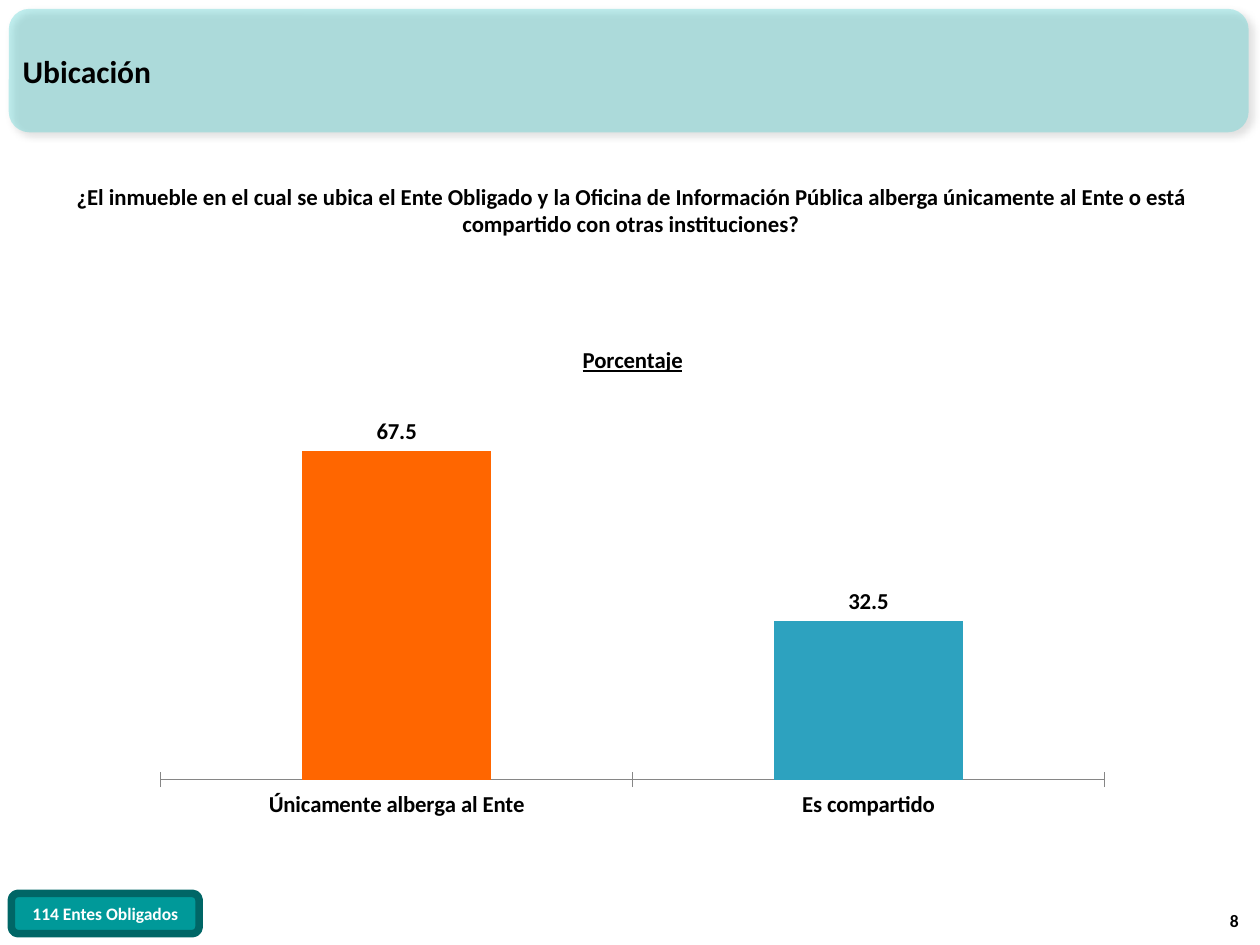
from dataclasses import dataclass

from lxml import etree
from pptx import Presentation
from pptx.chart.data import CategoryChartData
from pptx.dml.color import RGBColor
from pptx.enum import chart as ch, shapes, text
from pptx.oxml import ns, parse_xml
from pptx.util import Inches, Pt

FONT = "Calibri"
BLACK = RGBColor(0, 0, 0)
WHITE = RGBColor(255, 255, 255)
AQUA = RGBColor(0x33, 0xCC, 0xCC)
TEAL = RGBColor(0x00, 0x99, 0x99)
DARK = RGBColor(0x00, 0x66, 0x66)
BLUE = RGBColor(0x2D, 0xA2, 0xBF)
ORANGE = RGBColor(0xFF, 0x66, 0x00)
GRAY = RGBColor(0x86, 0x86, 0x86)


@dataclass
class Box:
    left: float
    top: float
    width: float
    height: float

    def place(self) -> list:
        return [Inches(n) for n in (self.left, self.top, self.width, self.height)]


@dataclass
class Label:
    words: str
    size: int
    align: text.PP_ALIGN
    anchor: text.MSO_ANCHOR = text.MSO_ANCHOR.MIDDLE
    color: RGBColor = BLACK


def style(font, size: float, color: RGBColor = BLACK) -> None:
    font.name, font.size, font.bold = FONT, Pt(size), True
    font.color.rgb = color


def write(shape, label: Label) -> None:
    frame = shape.text_frame
    frame.text = label.words
    frame.word_wrap = True
    frame.auto_size = text.MSO_AUTO_SIZE.NONE
    frame.vertical_anchor = label.anchor
    para = frame.paragraphs[0]
    para.alignment = label.align
    style(para.font, label.size, label.color)


def add_round(slide, box: Box, fill: RGBColor):
    shape = slide.shapes.add_shape(shapes.MSO_SHAPE.ROUNDED_RECTANGLE, *box.place())
    shape.shadow.inherit = False
    shape.fill.solid()
    shape.fill.fore_color.rgb = fill
    shape.line.fill.background()
    return shape


def add_glass(shape, alpha: int) -> None:
    """Make the fill translucent and give the shape a soft shadow."""
    props = shape.element.spPr
    color = props.find(ns.qn("a:solidFill"))[0]
    etree.SubElement(color, ns.qn("a:alpha"), val=str(alpha * 1000))
    props.find(ns.qn("a:effectLst")).append(parse_xml(
        f'<a:outerShdw {ns.nsdecls("a")} blurRad="{Pt(4)}" dist="{Pt(3)}"'
        ' dir="2700000" algn="tl" rotWithShape="0"><a:srgbClr val="000000">'
        '<a:alpha val="40000"/></a:srgbClr></a:outerShdw>'))


def set_plot(chart, box: Box) -> None:
    """Fix the inner plot area, in fractions of the chart."""
    plot = chart.element.find(".//" + ns.qn("c:plotArea"))
    for old in plot.findall(ns.qn("c:layout")):
        plot.remove(old)
    plot.insert(0, parse_xml(
        f'<c:layout {ns.nsdecls("c")}><c:manualLayout><c:layoutTarget val="inner"/>'
        '<c:xMode val="edge"/><c:yMode val="edge"/>'
        f'<c:x val="{box.left}"/><c:y val="{box.top}"/>'
        f'<c:w val="{box.width}"/><c:h val="{box.height}"/>'
        '</c:manualLayout></c:layout>'))


def add_bars(slide, box: Box) -> None:
    data = CategoryChartData(number_format="0.0")
    data.categories = ["Únicamente alberga al Ente", "Es compartido"]
    data.add_series("Porcentaje", (67.5, 32.5))
    kind = ch.XL_CHART_TYPE.COLUMN_CLUSTERED
    chart = slide.shapes.add_chart(kind, *box.place(), data).chart
    style(chart.font, 13)
    chart.has_legend = False
    set_plot(chart, Box(0.02, 0.13, 0.96, 0.77))

    # Chart title
    chart.has_title = True
    chart.chart_title.include_in_layout = False
    frame = chart.chart_title.text_frame
    frame.text = "Porcentaje"
    font = frame.paragraphs[0].font
    style(font, 13)
    font.underline = True

    # Axes
    axis = chart.category_axis
    axis.major_tick_mark = ch.XL_TICK_MARK.CROSS
    axis.format.line.color.rgb = GRAY
    scale = chart.value_axis
    scale.minimum_scale, scale.maximum_scale = 0, 80
    scale.has_major_gridlines = False
    scale.visible = False

    # Columns and their values
    plot = chart.plots[0]
    plot.gap_width = 150
    plot.vary_by_categories = False
    series = plot.series[0]
    for part, color in ((series, BLUE), (series.points[0], ORANGE)):
        part.format.fill.solid()
        part.format.fill.fore_color.rgb = color
    tags = series.data_labels
    tags.show_value = True
    tags.position = ch.XL_LABEL_POSITION.OUTSIDE_END
    tags.number_format, tags.number_format_is_linked = "0.0", False
    style(tags.font, 13)


def main() -> None:
    deck = Presentation()
    deck.slide_width, deck.slide_height = Inches(10), Inches(7.5)
    slide = deck.slides.add_slide(deck.slide_layouts[5])
    align, anchor = text.PP_ALIGN, text.MSO_ANCHOR

    # Banner with the title in front of it
    add_glass(add_round(slide, Box(0.07, 0.07, 9.84, 0.98), AQUA), 30)
    title = slide.shapes.title
    title.element.getparent().append(title.element)
    title.left, title.top, title.width, title.height = Box(0.08, 0.09, 9.29, 0.94).place()
    write(title, Label("Ubicación", 18, align.LEFT))

    # Question and page number
    query = ("¿El inmueble en el cual se ubica el Ente Obligado y la Oficina de "
             "Información Pública alberga únicamente al Ente o está compartido "
             "con otras instituciones?")
    for box, label in (
        (Box(0.39, 1.4, 9.23, 0.54), Label(query, 13, align.CENTER, anchor.TOP)),
        (Box(9.45, 7.04, 0.48, 0.4), Label("8", 10, align.RIGHT, anchor.BOTTOM)),
    ):
        write(slide.shapes.add_textbox(*box.place()), label)

    add_bars(slide, Box(1.12, 2.57, 7.8, 4.02))

    # Sample size badge
    badge = add_round(slide, Box(0.09, 7.09, 1.49, 0.32), TEAL)
    badge.line.color.rgb = DARK
    badge.line.width = Pt(4.33)
    write(badge, Label("114 Entes Obligados", 10, align.CENTER, color=WHITE))

    deck.save("out.pptx")


if __name__ == "__main__":
    main()
